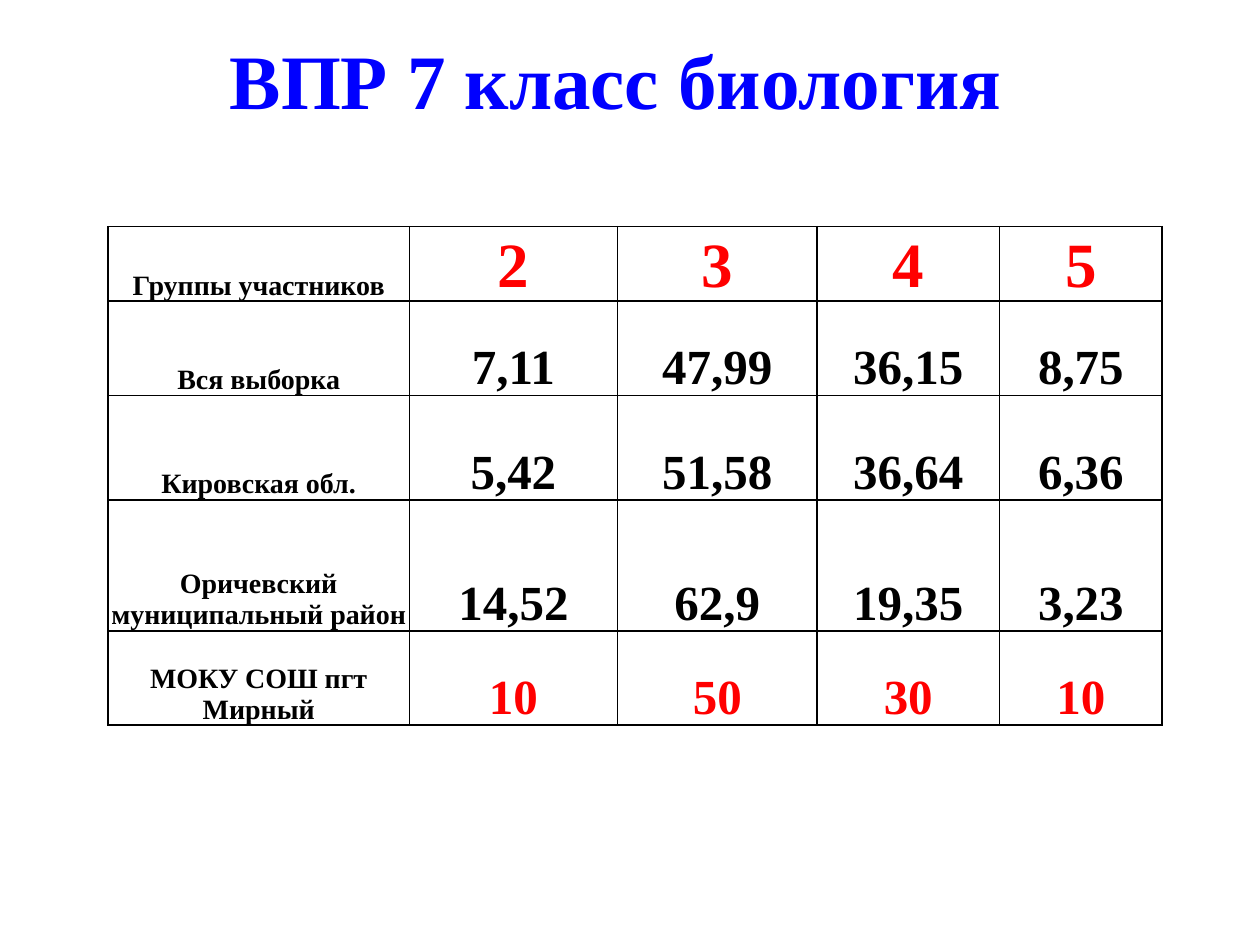
from dataclasses import dataclass

from lxml.etree import SubElement
from pptx import Presentation
from pptx.dml.color import RGBColor as Rgb
from pptx.enum.text import MSO_ANCHOR as Anchor, PP_ALIGN as Align
from pptx.oxml.ns import qn
from pptx.util import Cm, Pt


@dataclass(frozen=True)
class Theme:
    """Colours, font and type sizes."""
    font: str = "Times New Roman"
    blue: str = "0000FF"
    red: str = "FF0000"
    black: str = "000000"
    white: str = "FFFFFF"
    title: int = 44
    mark: int = 36
    value: int = 28
    label: int = 16
    rule: int = 1


def write(frame, text, size, color, font, bold=True, align=Align.CENTER):
    """Put one formatted paragraph in a text frame."""
    para = frame.paragraphs[0]
    para.alignment = align
    run = para.add_run()
    run.text = text
    run.font.name = font
    run.font.size = Pt(size)
    run.font.bold = bold
    run.font.color.rgb = Rgb.from_string(color)


class Deck:
    """Hold the theme and the current slide."""

    def __init__(self, theme):
        """Open a deck with one title-only slide."""
        self.theme = theme
        self.file = Presentation()
        self.file.slide_width, self.file.slide_height = Cm(25.4), Cm(19.05)
        self.slide = self.file.slides.add_slide(self.file.slide_layouts[5])

    def title(self, text, left, top, width, height):
        """Place and fill the title."""
        box = self.slide.shapes.title
        box.left, box.top = Cm(left), Cm(top)
        box.width, box.height = Cm(width), Cm(height)
        box.text_frame.vertical_anchor = Anchor.MIDDLE
        write(box.text_frame, text, self.theme.title, self.theme.blue, self.theme.font)

    def border(self, cell):
        """Draw the four sides of a cell."""
        props = cell._tc.get_or_add_tcPr()
        for side in ("lnL", "lnR", "lnT", "lnB"):
            line = SubElement(props, qn(f"a:{side}"), w=str(Pt(self.theme.rule)))
            fill = SubElement(line, qn("a:solidFill"))
            SubElement(fill, qn("a:srgbClr"), val=self.theme.black)

    def cell(self, cell, text, size, color):
        """Format and fill one cell."""
        self.border(cell)
        cell.fill.solid()
        cell.fill.fore_color.rgb = Rgb.from_string(self.theme.white)
        cell.vertical_anchor = Anchor.BOTTOM
        cell.margin_left = cell.margin_right = cell.margin_top = Cm(0.03)
        cell.margin_bottom = 0
        write(cell.text_frame, text, size, color, self.theme.font)

    def table(self, rows, left, top, widths, heights):
        """Add a table with red marks on top and red school results below."""
        theme = self.theme
        grid = self.slide.shapes.add_table(
            len(rows), len(widths), Cm(left), Cm(top),
            Cm(sum(widths)), Cm(sum(heights))).table
        for col, width in zip(grid.columns, widths):
            col.width = Cm(width)
        for row, height in zip(grid.rows, heights):
            row.height = Cm(height)
        last = len(rows) - 1
        for r, (label, *values) in enumerate(rows):
            size = theme.mark if r == 0 else theme.value
            color = theme.red if r in (0, last) else theme.black
            self.cell(grid.cell(r, 0), label, theme.label, theme.black)
            for c, value in enumerate(values, 1):
                self.cell(grid.cell(r, c), value, size, color)


ROWS = [
    ("Группы участников", "2", "3", "4", "5"),
    ("Вся выборка", "7,11", "47,99", "36,15", "8,75"),
    ("Кировская обл.", "5,42", "51,58", "36,64", "6,36"),
    ("Оричевский муниципальный район", "14,52", "62,9", "19,35", "3,23"),
    ("МОКУ СОШ пгт Мирный", "10", "50", "30", "10"),
]


def main():
    """Build and save the slide."""
    deck = Deck(Theme())
    deck.title("ВПР 7 класс биология", 0.99, 0, 22.86, 3.18)
    deck.table(ROWS, 2.18, 4.57,
               widths=(6.07, 4.2, 4.02, 3.68, 3.28),
               heights=(1.5, 1.9, 2.11, 2.64, 1.9))
    deck.file.save("out.pptx")


if __name__ == "__main__":
    main()
